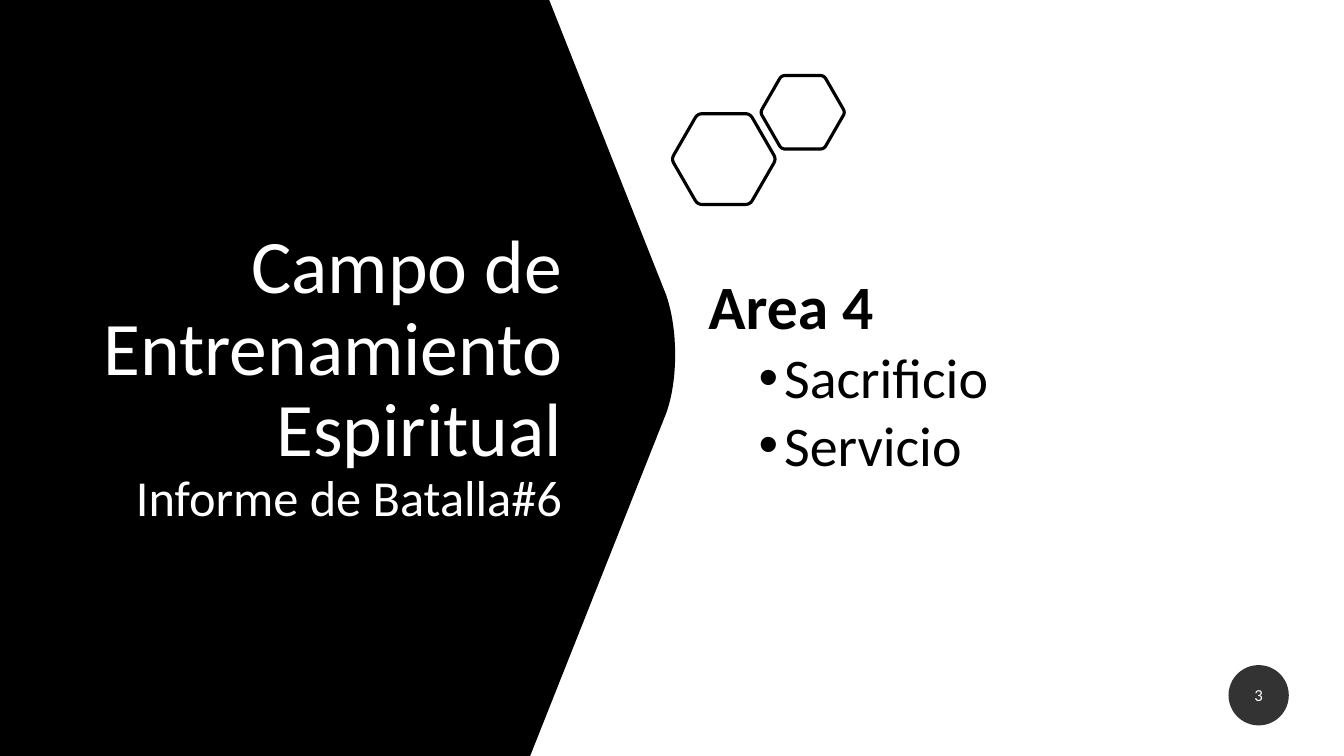
import math
from dataclasses import dataclass

from lxml import etree
from pptx import Presentation
from pptx import util as u
from pptx.dml.color import RGBColor
from pptx.enum import shapes, text
from pptx.oxml.ns import qn

TITLE = "Campo de Entrenamiento Espiritual"
SUBTITLE = "Informe de Batalla#6"
AREA = "Area 4"
TOPICS = ["Sacrificio", "Servicio"]
PAGE_NUMBER = "3"

# All places and lengths below are in centimetres.
SLIDE = (33.87, 19.05)
PANEL_TOP, PANEL_BOTTOM = 13.84, 13.36
PANEL_NOSE = [(16.79, 7.44), (17.09, 8.31), (17.09, 9.58), (16.79, 10.41)]
HEXAGONS = [((18.24, 4.01), 1.32), ((20.23, 2.83), 1.07)]
TITLE_BOX = (2.13, 3.58, 12.29, 11.89)
BODY_BOX = (17.6, 6.63, 12.75, 7.19)
BODY_BOTTOM_INSET = 1.55
BADGE = (30.96, 16.76, 1.52, 1.52)
BULLET_INDENT, BULLET_HANG = 1.91, 0.64
CORNER_CUT = 0.09
CURVE_STEPS = 24


@dataclass(frozen=True)
class Theme:
    font: str = "Calibri"
    dark: RGBColor = RGBColor(0, 0, 0)
    light: RGBColor = RGBColor(255, 255, 255)
    title: int = 54
    subtitle: int = 36
    area: int = 44
    topic: int = 40
    number: int = 12
    outline: float = 2.25
    badge_alpha: int = 80
    line_spacing: float = 0.9


THEME = Theme()


def bezier(points, steps=CURVE_STEPS):
    """Points along a Bezier curve of any degree."""
    degree = len(points) - 1
    curve = []
    for step in range(steps + 1):
        t = step / steps
        weights = [math.comb(degree, i) * t**i * (1 - t) ** (degree - i)
                   for i in range(degree + 1)]
        curve.append(tuple(sum(w * p[axis] for w, p in zip(weights, points))
                           for axis in (0, 1)))
    return curve


def rounded_hexagon(center, radius):
    corners = [(center[0] + radius * math.cos(math.radians(60 * i)),
                center[1] + radius * math.sin(math.radians(60 * i)))
               for i in range(6)]

    def toward(start, end):
        return tuple(a + CORNER_CUT * (b - a) for a, b in zip(start, end))

    outline = []
    for i, corner in enumerate(corners):
        before, after = corners[i - 1], corners[(i + 1) % 6]
        outline += bezier([toward(corner, before), corner, toward(corner, after)], 6)
    return outline


def add_outline(container, points):
    emu = [(u.Cm(x), u.Cm(y)) for x, y in points]
    builder = container.build_freeform(*emu[0])
    builder.add_line_segments(emu[1:], close=True)
    shape = builder.convert_to_shape()
    shape.shadow.inherit = False
    return shape


def fill_plain(shape, color):
    shape.shadow.inherit = False
    shape.fill.solid()
    shape.fill.fore_color.rgb = color
    shape.line.fill.background()


def add_text_box(page, place):
    box = page.shapes.add_textbox(*map(u.Cm, place))
    frame = box.text_frame
    frame.word_wrap = True
    frame.vertical_anchor = text.MSO_ANCHOR.MIDDLE
    return frame


def add_span(para, words, size, color, bold=False):
    span = para.add_run()
    span.text = words
    span.font.name = THEME.font
    span.font.size = u.Pt(size)
    span.font.bold = bold
    span.font.color.rgb = color


def add_bullet(para):
    props = para._p.get_or_add_pPr()
    props.set("marL", str(u.Cm(BULLET_INDENT)))
    props.set("indent", str(-u.Cm(BULLET_HANG)))
    etree.SubElement(props, qn("a:buFont")).set("typeface", "Arial")
    etree.SubElement(props, qn("a:buChar")).set("char", "•")


def add_panel(page):
    points = [(0, 0), (PANEL_TOP, 0), *bezier(PANEL_NOSE),
              (PANEL_BOTTOM, SLIDE[1]), (0, SLIDE[1])]
    fill_plain(add_outline(page.shapes, points), THEME.dark)


def add_hexagons(page):
    group = page.shapes.add_group_shape()
    for center, radius in HEXAGONS:
        hexagon = add_outline(group.shapes, rounded_hexagon(center, radius))
        hexagon.fill.background()
        hexagon.line.color.rgb = THEME.dark
        hexagon.line.width = u.Pt(THEME.outline)


def add_title(page):
    para = add_text_box(page, TITLE_BOX).paragraphs[0]
    para.alignment = text.PP_ALIGN.RIGHT
    para.line_spacing = THEME.line_spacing
    add_span(para, TITLE, THEME.title, THEME.light)
    para.add_line_break()
    add_span(para, SUBTITLE, THEME.subtitle, THEME.light)


def add_body(page):
    frame = add_text_box(page, BODY_BOX)
    frame.margin_bottom = u.Cm(BODY_BOTTOM_INSET)
    heading = frame.paragraphs[0]
    heading.line_spacing = THEME.line_spacing
    heading.space_before = u.Pt(10)
    add_span(heading, AREA, THEME.area, THEME.dark, bold=True)
    for topic in TOPICS:
        para = frame.add_paragraph()
        para.level = 1
        para.line_spacing = THEME.line_spacing
        para.space_before = u.Pt(5)
        add_bullet(para)
        add_span(para, topic, THEME.topic, THEME.dark)


def add_page_number(page):
    badge = page.shapes.add_shape(shapes.MSO_SHAPE.OVAL, *map(u.Cm, BADGE))
    fill_plain(badge, THEME.dark)
    color = badge.fill._xPr.find(qn("a:solidFill"))[0]
    etree.SubElement(color, qn("a:alpha")).set("val", str(THEME.badge_alpha * 1000))
    frame = badge.text_frame
    frame.vertical_anchor = text.MSO_ANCHOR.MIDDLE
    frame.margin_left = frame.margin_right = 0
    para = frame.paragraphs[0]
    para.alignment = text.PP_ALIGN.CENTER
    add_span(para, PAGE_NUMBER, THEME.number, THEME.light)


def main():
    deck = Presentation()
    deck.slide_width, deck.slide_height = map(u.Cm, SLIDE)
    page = deck.slides.add_slide(deck.slide_layouts[6])
    page.background.fill.solid()
    page.background.fill.fore_color.rgb = THEME.light
    add_panel(page)
    add_title(page)
    add_hexagons(page)
    add_body(page)
    add_page_number(page)
    deck.save("out.pptx")


if __name__ == "__main__":
    main()
